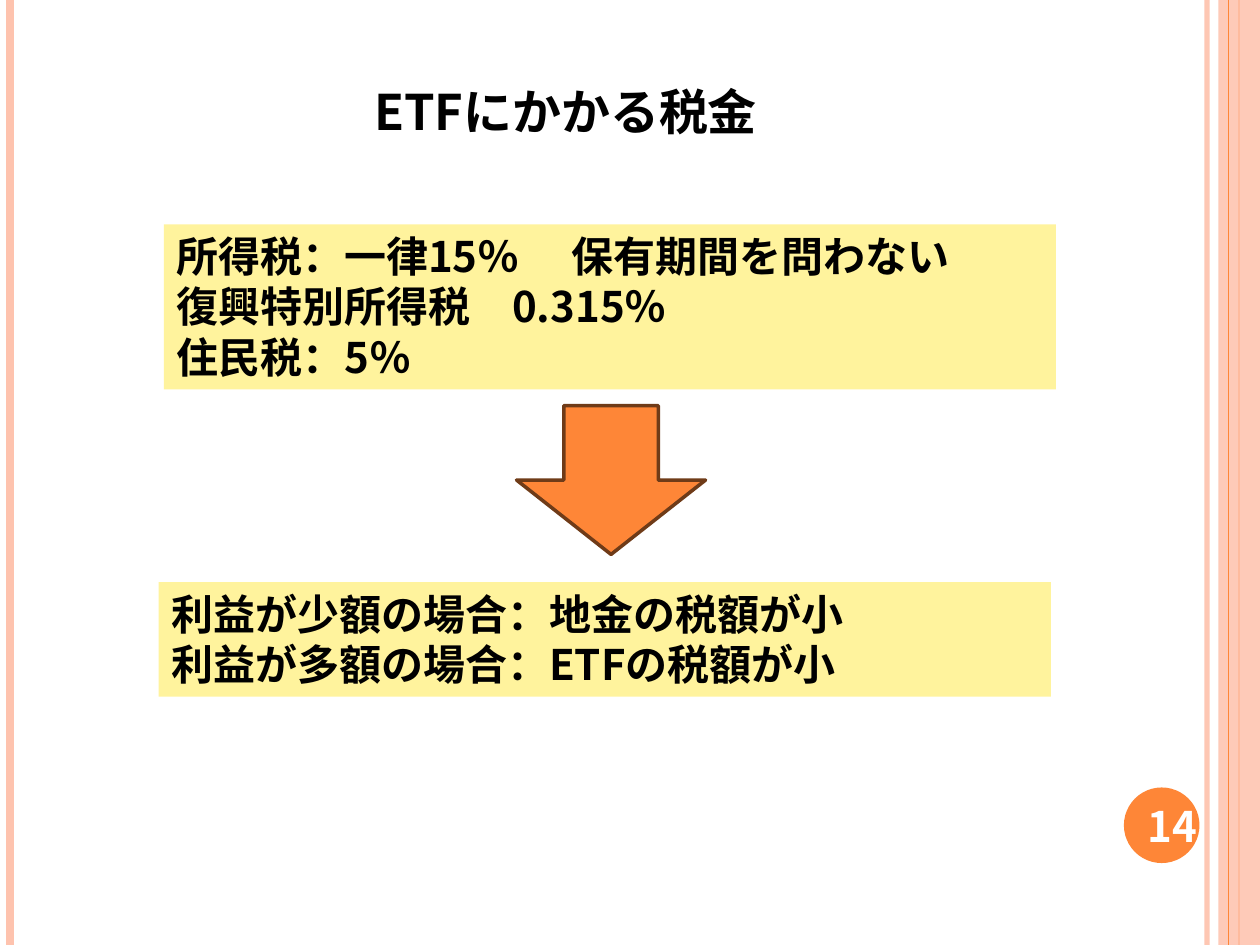
from lxml import etree
from pptx import Presentation
from pptx import util as u
from pptx.dml.color import RGBColor
from pptx.enum import shapes, text
from pptx.oxml.ns import qn

WIDTH, HEIGHT = 10, 7.5
FONT = "Noto Sans CJK JP"
BLACK = RGBColor(0x00, 0x00, 0x00)
WHITE = RGBColor(0xFF, 0xFF, 0xFF)
ORANGE = RGBColor(0xFE, 0x86, 0x37)
PEACH = RGBColor(0xFE, 0xC3, 0xAE)
YELLOW = RGBColor(0xFF, 0xF3, 0x9D)
BROWN = RGBColor(0x6F, 0x3B, 0x18)


def inches(box):
    return [u.Inches(length) for length in box]


def set_alpha(fill_parent, percent):
    color = next(fill_parent.iter(qn("a:srgbClr")))
    etree.SubElement(color, qn("a:alpha")).set("val", str(percent * 1000))


def add_shape(slide, kind, box, fill, line=None, line_width=2):
    shape = slide.shapes.add_shape(kind, *inches(box))
    shape.shadow.inherit = False
    shape.fill.solid()
    shape.fill.fore_color.rgb = fill
    if line is None:
        shape.line.fill.background()
    else:
        shape.line.color.rgb = line
        shape.line.width = u.Pt(line_width)
    return shape


def write(shape, lines, size=24, color=BLACK, align=text.PP_ALIGN.LEFT,
          anchor=text.MSO_ANCHOR.TOP, grow=True):
    frame = shape.text_frame
    frame.word_wrap = True
    frame.vertical_anchor = anchor
    frame.auto_size = (text.MSO_AUTO_SIZE.SHAPE_TO_FIT_TEXT if grow
                       else text.MSO_AUTO_SIZE.NONE)
    for index, line in enumerate(lines):
        paragraph = frame.add_paragraph() if index else frame.paragraphs[0]
        paragraph.alignment = align
        run = paragraph.add_run()
        run.text = line
        run.font.size, run.font.bold, run.font.name = u.Pt(size), True, FONT
        run.font.color.rgb = color
        # East Asian characters take their own typeface element
        etree.SubElement(run.font._element, qn("a:ea")).set("typeface", FONT)


def add_rule(slide, x, color, width, alpha=100):
    rule = slide.shapes.add_connector(
        shapes.MSO_CONNECTOR.STRAIGHT, *inches((x, 0, x, HEIGHT)))
    rule.line.color.rgb = color
    rule.line.width = u.Pt(width)
    properties = rule._element.spPr
    if alpha < 100:
        set_alpha(properties, alpha)
    etree.SubElement(properties, qn("a:effectLst"))


def add_frame(slide, box):
    """Vertical stripes along both edges; box is the right-hand band."""
    left, top, width, height = box
    add_rule(slide, left - 0.09, PEACH, 3, alpha=93)
    add_rule(slide, 0.08, PEACH, 4.5)
    add_rule(slide, left + width / 2, ORANGE, 1.5)
    band = add_shape(slide, shapes.MSO_SHAPE.RECTANGLE, box, PEACH)
    set_alpha(band._element.spPr, 87)
    add_rule(slide, left + width / 4, ORANGE, 0.75)


def add_page_number(slide, box, number):
    left, top, width, height = box
    add_shape(slide, shapes.MSO_SHAPE.OVAL, box, ORANGE)
    label = slide.shapes.add_textbox(
        *inches((left - 0.03, top + 0.02, 0.83, 0.57)))
    write(label, [number], color=WHITE, align=text.PP_ALIGN.CENTER,
          anchor=text.MSO_ANCHOR.MIDDLE, grow=False)


def add_title(slide, box, title):
    write(slide.shapes.add_textbox(*inches(box)), [title], size=28)


def add_panel(slide, box, lines):
    panel = add_shape(slide, shapes.MSO_SHAPE.RECTANGLE, box, YELLOW)
    write(panel, lines)


def main():
    presentation = Presentation()
    presentation.slide_width = u.Inches(WIDTH)
    presentation.slide_height = u.Inches(HEIGHT)
    slide = presentation.slides.add_slide(presentation.slide_layouts[6])
    slide.background.fill.solid()
    slide.background.fill.fore_color.rgb = WHITE

    # Edge decoration and page number
    add_frame(slide, (WIDTH - 0.33, 0, 0.33, HEIGHT))
    add_page_number(slide, (8.92, 6.25, 0.6, 0.6), "14")

    # Title, tax rates, arrow and conclusion
    add_title(slide, (2.87, 0.6, 3.31, 0.57), "ETFにかかる税金")
    add_panel(slide, (1.3, 1.78, 7.08, 1.31), [
        "所得税：一律15％ 　保有期間を問わない",
        "復興特別所得税　0.315％",
        "住民税：5％",
    ])
    add_shape(slide, shapes.MSO_SHAPE.DOWN_ARROW, (4.1, 3.22, 1.5, 1.18),
              ORANGE, line=BROWN)
    add_panel(slide, (1.26, 4.62, 7.08, 0.91), [
        "利益が少額の場合：地金の税額が小",
        "利益が多額の場合：ETFの税額が小",
    ])
    presentation.save("out.pptx")


if __name__ == "__main__":
    main()
